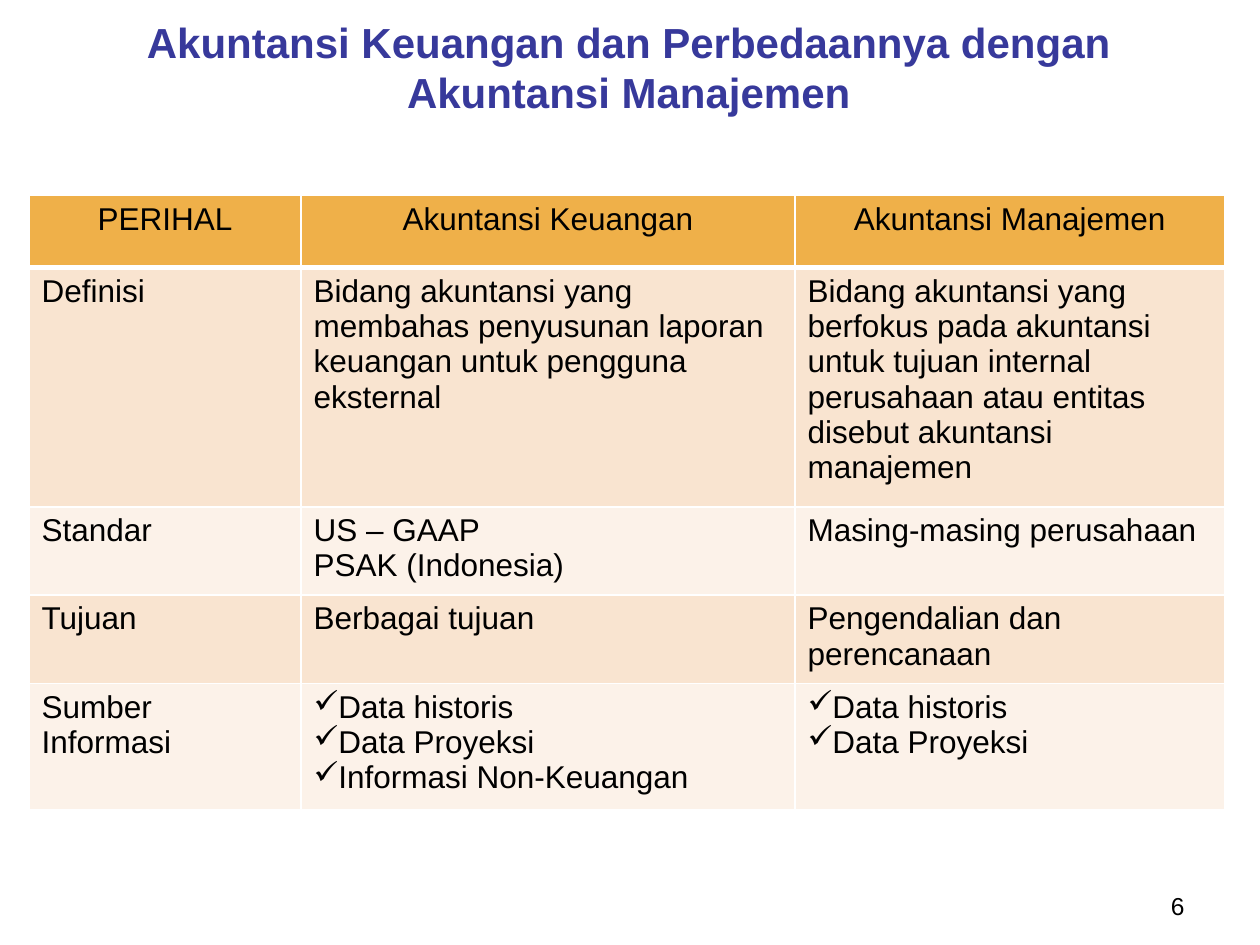
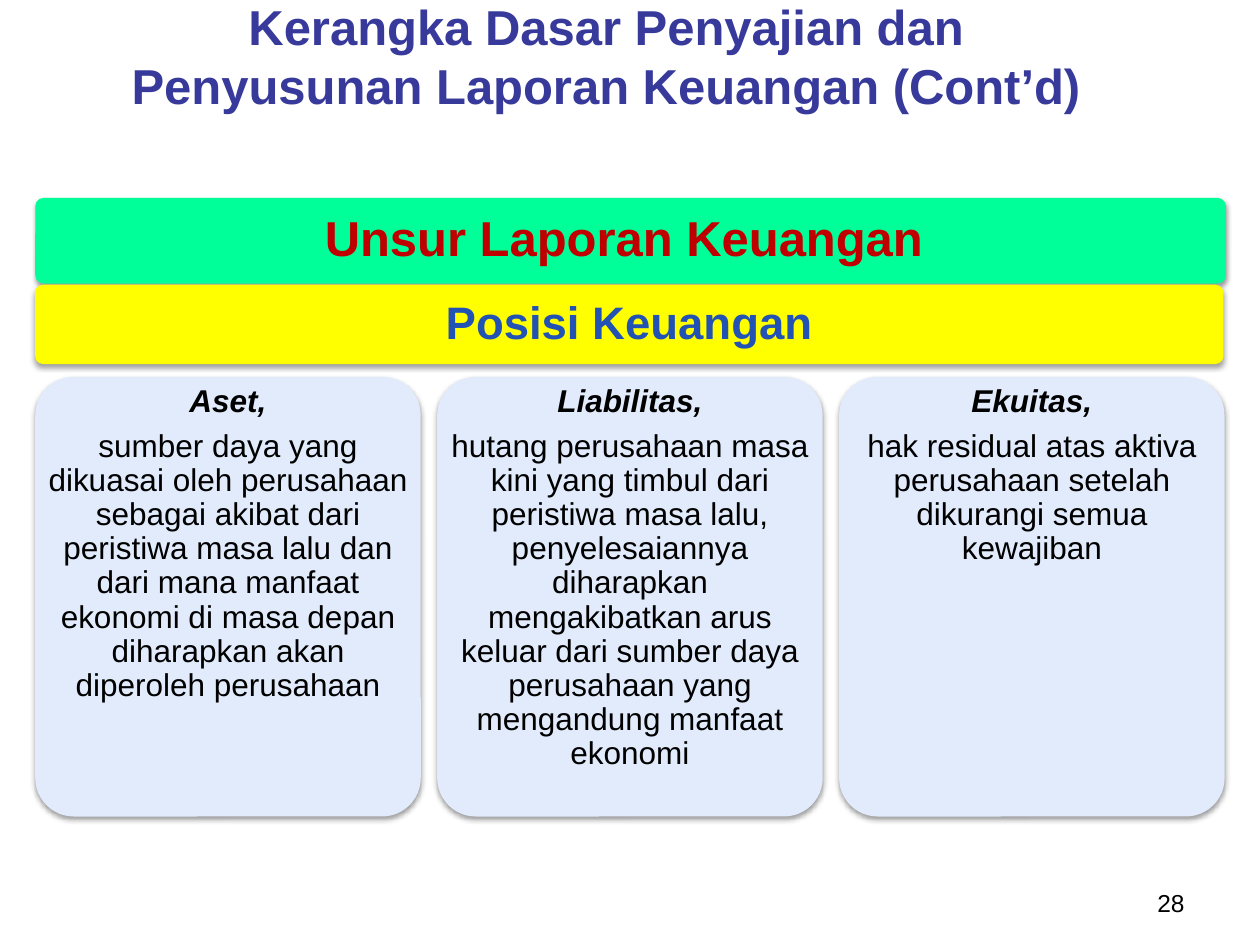
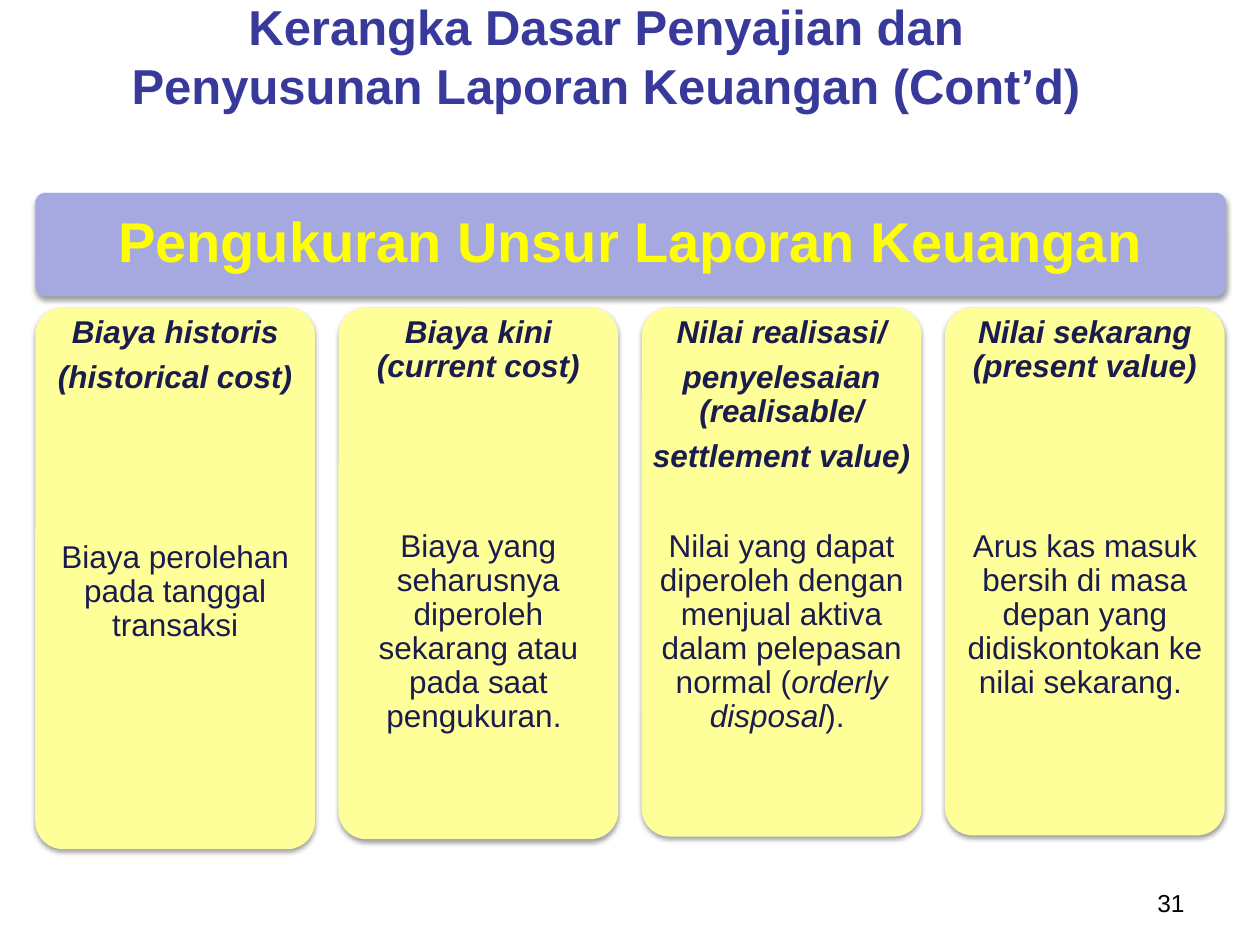
from lxml import etree
from pptx import Presentation
from pptx.dml.color import RGBColor
from pptx.enum.shapes import MSO_SHAPE
from pptx.enum.text import MSO_ANCHOR, MSO_AUTO_SIZE, PP_ALIGN
from pptx.oxml.ns import qn
from pptx.util import Pt

ROUNDED = MSO_SHAPE.ROUNDED_RECTANGLE
LEFT, CENTER, RIGHT = PP_ALIGN.LEFT, PP_ALIGN.CENTER, PP_ALIGN.RIGHT
TOP, MIDDLE = MSO_ANCHOR.TOP, MSO_ANCHOR.MIDDLE
NO_FIT = MSO_AUTO_SIZE.NONE

FONT = "Arial"
BLACK, WHITE, INDIGO, NAVY = "000000", "FFFFFF", "37399B", "1B1C4E"
GREEN, YELLOW, LILAC = "00FF99", "FFFF00", "A6A8E0"
PALE_BLUE, PALE_YELLOW = "E1EBFB", "FFFF99"
RED, BLUE = "C00000", "2152B4"
HEADER_FILL, BAND_FILLS = "EFB049", ("F9E4D0", "FCF2E9")
EDGE = 20.16
BODY_SIZE, CARD_INSET, AFTER_SHARE = 18, 5.04, 0.35
LINE_STEP = 25.75
FRAMEWORK_TITLE = "Kerangka Dasar Penyajian dan\nPenyusunan Laporan Keuangan (Cont’d)"


def color(value):
    return RGBColor.from_string(value)


def add_xml(parent, tag, **attributes):
    return etree.SubElement(parent, qn(tag), attributes)


class Deck:
    """Holds the shared style and the page being built."""

    def __init__(self):
        self.file = Presentation()
        self.file.slide_width, self.file.slide_height = Pt(720), Pt(540)
        self.page = None

    def add_page(self, title, number, title_at, size, number_top):
        self.page = self.file.slides.add_slide(self.file.slide_layouts[5])
        box = self.page.shapes.title
        box.left, box.top = (Pt(value) for value in title_at)
        box.width, box.height = Pt(648), Pt(44.64)
        frame = box.text_frame
        frame.auto_size, frame.vertical_anchor = NO_FIT, MIDDLE
        self.add_spans(frame.paragraphs[0], [(title, True, False)], size, INDIGO, CENTER)
        frame = self.add_text(516.24, number_top, 167.76, 25.2)
        self.add_spans(frame.paragraphs[0], [(number, False, False)], 14, BLACK, RIGHT)

    def add_spans(self, para, spans, size, ink, align=LEFT):
        para.alignment = align
        for text, bold, italic in spans:
            for index, line in enumerate(text.split("\n")):
                if index:
                    para.add_line_break()
                span = para.add_run()
                span.text = line
                font = span.font
                font.name, font.size = FONT, Pt(size)
                font.bold, font.italic = bold, italic
                font.color.rgb = color(ink)

    def add_text(self, left, top, width, height, inset=None, anchor=TOP):
        box = self.page.shapes.add_textbox(Pt(left), Pt(top), Pt(width), Pt(height))
        frame = box.text_frame
        frame.word_wrap, frame.vertical_anchor = True, anchor
        if inset is not None:
            frame.margin_left = frame.margin_right = Pt(inset)
            frame.margin_top = frame.margin_bottom = Pt(inset)
        return frame

    def add_panel(self, left, top, width, height, fill):
        panel = self.page.shapes.add_shape(ROUNDED, Pt(left), Pt(top), Pt(width), Pt(height))
        panel.adjustments[0] = 0.1
        panel.fill.solid()
        panel.fill.fore_color.rgb = color(fill)
        panel.line.fill.background()
        panel.shadow.inherit = False
        effects = panel.element.spPr.find(qn("a:effectLst"))
        shadow = add_xml(effects, "a:outerShdw", blurRad=str(Pt(3.1)), dist=str(Pt(1.6)),
                         dir="5400000", rotWithShape="0")
        add_xml(add_xml(shadow, "a:srgbClr", val=BLACK), "a:alpha", val="38000")

    def add_banner(self, text, top, width, height, fill, ink, size, inset):
        self.add_panel(EDGE, top, width, height, fill)
        para = self.add_text(EDGE, top, width, height, inset, MIDDLE).paragraphs[0]
        para.line_spacing = 0.9
        self.add_spans(para, [(text, True, False)], size, ink, CENTER)

    def add_card(self, left, top, width, height, fill, ink, headings, body, skipped=0):
        self.add_panel(left, top, width, height, fill)
        frame = self.add_text(left, top, width, height, CARD_INSET)
        paragraphs = [[(heading, True, True)] for heading in headings] + [body]
        for index, spans in enumerate(paragraphs):
            para = frame.add_paragraph() if index else frame.paragraphs[0]
            para.line_spacing = 0.9
            lines = skipped if index == len(headings) - 1 else 0
            para.space_after = Pt(AFTER_SHARE * BODY_SIZE + lines * LINE_STEP)
            self.add_spans(para, spans, BODY_SIZE, ink, CENTER)

    def add_table(self, left, top, widths, heights, rows):
        table = self.page.shapes.add_table(
            len(rows), len(widths), Pt(left), Pt(top), Pt(sum(widths)), Pt(sum(heights))).table
        table.first_row = table.horz_banding = False
        for column, width in zip(table.columns, widths):
            column.width = Pt(width)
        for index, (height, texts) in enumerate(zip(heights, rows)):
            table.rows[index].height = Pt(height)
            for place, text in enumerate(texts):
                self.fill_cell(table.cell(index, place), text, index)

    def fill_cell(self, cell, text, row):
        properties = cell._tc.get_or_add_tcPr()
        for side in "LRTB":
            heavy = (row == 0 and side == "B") or (row == 1 and side == "T")
            line = add_xml(properties, f"a:ln{side}", w=str(Pt(3 if heavy else 1)))
            add_xml(add_xml(line, "a:solidFill"), "a:srgbClr", val=WHITE)
        cell.fill.solid()
        cell.fill.fore_color.rgb = color(BAND_FILLS[(row - 1) % 2] if row else HEADER_FILL)
        for index, line in enumerate(text.split("\n")):
            frame = cell.text_frame
            para = frame.add_paragraph() if index else frame.paragraphs[0]
            if line.startswith("✓"):
                layout = para._p.get_or_add_pPr()
                layout.set("marL", str(Pt(13.68)))
                layout.set("indent", str(-Pt(13.68)))
                add_xml(layout, "a:buChar", char="✓")
            spans = [(line.lstrip("✓"), False, False)]
            self.add_spans(para, spans, BODY_SIZE, BLACK, LEFT if row else CENTER)


def build_comparison(deck):
    deck.add_page("Akuntansi Keuangan dan Perbedaannya dengan Akuntansi Manajemen",
                  "6", (35.28, 15.84), 24, 505.44)
    rows = [
        ("PERIHAL", "Akuntansi Keuangan", "Akuntansi Manajemen"),
        ("Definisi",
         "Bidang akuntansi yang membahas penyusunan laporan keuangan untuk pengguna eksternal",
         "Bidang akuntansi yang berfokus pada akuntansi untuk tujuan internal perusahaan "
         "atau entitas disebut akuntansi manajemen"),
        ("Standar", "US – GAAP\nPSAK (Indonesia)", "Masing-masing perusahaan"),
        ("Tujuan", "Berbagai tujuan", "Pengendalian dan perencanaan"),
        ("Sumber Informasi", "✓Data historis\n✓Data Proyeksi\n✓Informasi Non-Keuangan",
         "✓Data historis\n✓Data Proyeksi"),
    ]
    deck.add_table(16.56, 111.6, (155.52, 282.24, 245.52), (41.2, 128, 47.4, 47.4, 67.5), rows)


def build_elements(deck):
    deck.add_page(FRAMEWORK_TITLE, "28", (22.32, 9.36), 28, 504)
    deck.add_banner("Unsur Laporan Keuangan ", 113.04, 680.4, 48.96, GREEN, RED, 28, 8.64)
    deck.add_banner("Posisi Keuangan", 162.72, 678.96, 45.36, YELLOW, BLUE, 26, 7.92)
    elements = [
        ("Aset,", "sumber daya yang dikuasai oleh perusahaan sebagai akibat dari peristiwa "
         "masa lalu dan dari mana manfaat ekonomi di masa depan diharapkan akan "
         "diperoleh perusahaan"),
        ("Liabilitas,", "hutang perusahaan masa kini yang timbul dari peristiwa masa lalu, "
         "penyelesaiannya diharapkan mengakibatkan arus keluar dari sumber daya "
         "perusahaan yang mengandung manfaat ekonomi"),
        ("Ekuitas,", "hak residual atas aktiva perusahaan setelah dikurangi semua kewajiban"),
    ]
    for index, (name, meaning) in enumerate(elements):
        deck.add_card(EDGE + index * 229.68, 215.28, 220.32, 251.28, PALE_BLUE, BLACK,
                      [name], [(meaning, False, False)])


def build_measurement(deck):
    deck.add_page(FRAMEWORK_TITLE, "31", (22.32, 9.36), 28, 504)
    deck.add_banner("Pengukuran Unsur Laporan Keuangan", 110.16, 680.4, 59.04,
                    LILAC, YELLOW, 32, 9.36)
    bases = [
        (309.6, ["Biaya historis", "(historical cost)"], 3,
         [("Biaya perolehan pada tanggal transaksi", False, False)]),
        (303.84, ["Biaya kini (current cost)"], 3,
         [("Biaya yang seharusnya diperoleh sekarang atau pada saat pengukuran. ",
           False, False)]),
        (302.4, ["Nilai realisasi/", "penyelesaian (realisable/", "settlement value)"], 1,
         [("Nilai yang dapat diperoleh dengan menjual aktiva dalam pelepasan normal (",
           False, False), ("orderly disposal", False, True), ("). ", False, False)]),
        (301.68, ["Nilai sekarang (present value)"], 3,
         [("Arus kas masuk bersih di masa depan yang didiskontokan ke nilai sekarang. ",
           False, False)]),
    ]
    for index, (height, headings, skipped, body) in enumerate(bases):
        deck.add_card(EDGE + index * 173.28, 175.68, 159.84, height, PALE_YELLOW, NAVY,
                      headings, body, skipped)


def main():
    deck = Deck()
    build_comparison(deck)
    build_elements(deck)
    build_measurement(deck)
    deck.file.save("out.pptx")


if __name__ == "__main__":
    main()
